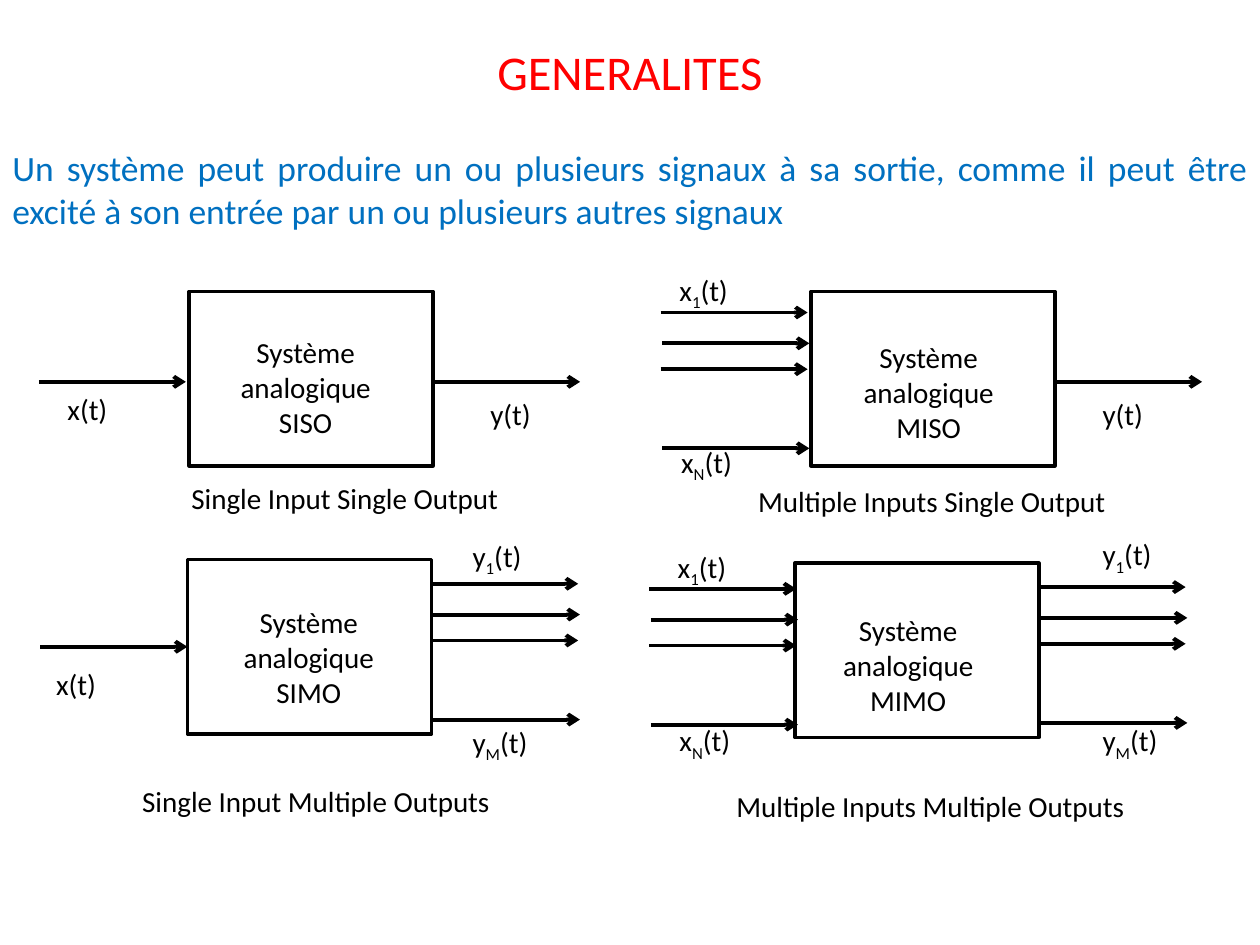
from lxml.etree import SubElement
from pptx import Presentation
from pptx.dml.color import RGBColor
from pptx.enum.shapes import MSO_CONNECTOR, MSO_SHAPE
from pptx.enum.text import MSO_AUTO_SIZE, PP_ALIGN
from pptx.oxml.ns import qn
from pptx.util import Pt

BLACK, RED, BLUE = "000000", "FF0000", "0070C0"
LEFT, MID, FULL = PP_ALIGN.LEFT, PP_ALIGN.CENTER, PP_ALIGN.JUSTIFY
BOX_W, BOX_H = 139.5, 99.6
REACH = 84
STEPS = (0, 17.6, 32.4, 77.6)


def color(code):
    return RGBColor.from_string(code)


class Pen:
    font = "Calibri"
    size = 16.6

    def __init__(self, slide):
        self.slide = slide

    def text(self, x, y, w, h, paras, align=MID, size=size, ink=BLACK):
        """Each paragraph is a list of runs; a run after '_' is lowered."""
        shape = self.slide.shapes.add_textbox(Pt(x), Pt(y), Pt(w), Pt(h))
        frame = shape.text_frame
        frame.word_wrap = True
        frame.auto_size = MSO_AUTO_SIZE.SHAPE_TO_FIT_TEXT
        for i, runs in enumerate(paras):
            para = frame.add_paragraph() if i else frame.paragraphs[0]
            para.alignment = align
            for words in runs:
                run = para.add_run()
                run.text = words.lstrip("_")
                run.font.name = self.font
                run.font.size = Pt(size)
                run.font.color.rgb = color(ink)
                if words.startswith("_"):
                    run._r.get_or_add_rPr().set("baseline", "-25000")

    def box(self, x, y):
        shape = self.slide.shapes.add_shape(
            MSO_SHAPE.RECTANGLE, Pt(x), Pt(y), Pt(BOX_W), Pt(BOX_H))
        shape.shadow.inherit = False
        shape.fill.background()
        shape.line.color.rgb = color(BLACK)
        shape.line.width = Pt(2)
        return shape

    def arrow(self, x, y, goal=None):
        line = self.slide.shapes.add_connector(
            MSO_CONNECTOR.STRAIGHT, Pt(x), Pt(y), Pt(x + REACH), Pt(y))
        line.line.color.rgb = color(BLACK)
        line.line.width = Pt(2.25)
        SubElement(line.line._get_or_add_ln(), qn("a:tailEnd"), type="arrow")
        SubElement(line._element.spPr, qn("a:effectLst"))
        if goal is not None:
            line.end_connect(goal, 1)

    def bundle(self, x, y):
        for i, step in enumerate(STEPS):
            self.arrow(x + i % 2, y + step)

    def label(self, x, y, *runs):
        self.text(x, y, 66, 27.4, [runs], LEFT)


deck = Presentation()
deck.slide_width, deck.slide_height = Pt(720), Pt(540)
pen = Pen(deck.slides.add_slide(deck.slide_layouts[6]))

# Title and introduction
pen.text(0, 20.6, 720, 41, [["GENERALITES"]], size=27.7, ink=RED)
pen.text(0, 79.9, 720, 56.2, [[
    "Un système peut produire un ou plusieurs signaux à sa sortie, "
    "comme il peut être excité à son entrée par un ou plusieurs "
    "autres signaux"]], FULL, 20.3, BLUE)

# Systems: name, box corner, name corner, caption, caption corner
systems = (
    ("SISO", 108, 166.6, 116.3, 187.6,
     "Single Input Single Output", 33.8, 270.7),
    ("MISO", 463.4, 166.6, 472.3, 190.6,
     "Multiple Inputs Single Output", 369.2, 272.9),
    ("SIMO", 107.1, 319.8, 118.1, 342,
     "Single Input Multiple Outputs", 17.3, 444.4),
    ("MIMO", 454.2, 321.8, 460.6, 346.3,
     "Multiple Inputs Multiple Outputs", 368.4, 447.1),
)
boxes = {}
for name, x, y, tx, ty, note, nx, ny in systems:
    boxes[name] = pen.box(x, y)
    pen.text(tx, ty, 116.6, 67.7, [["Système analogique"], [name]])
    pen.text(nx, ny, 326.2, 27.4, [[note]])

# Single signals
for x in (22.2, 247.5, 602.9):
    pen.arrow(x, 218.2)
pen.arrow(23, 369.6, boxes["SIMO"])

# Multiple signals
for x, y in ((377.5, 178.6), (246.4, 333.6), (593.5, 335.5), (371, 336.5)):
    pen.bundle(x, y)

# Signal labels
for x, y, name in ((31.5, 220.3, "x"), (273.1, 223.2, "y"),
                   (623, 223.2, "y"), (25, 377.4, "x")):
    pen.label(x, y, name + "(t)")
for x, y, name, sub in (
        (381.2, 151.9, "x", "1"), (382.2, 250.4, "x", "N"),
        (380.2, 310.3, "x", "1"), (381.2, 409.5, "x", "N"),
        (263, 304, "y", "1"), (263, 410.4, "y", "M"),
        (623, 303.1, "y", "1"), (623, 409.5, "y", "M")):
    pen.label(x, y, name, "_" + sub, "(t)")

deck.save("out.pptx")
